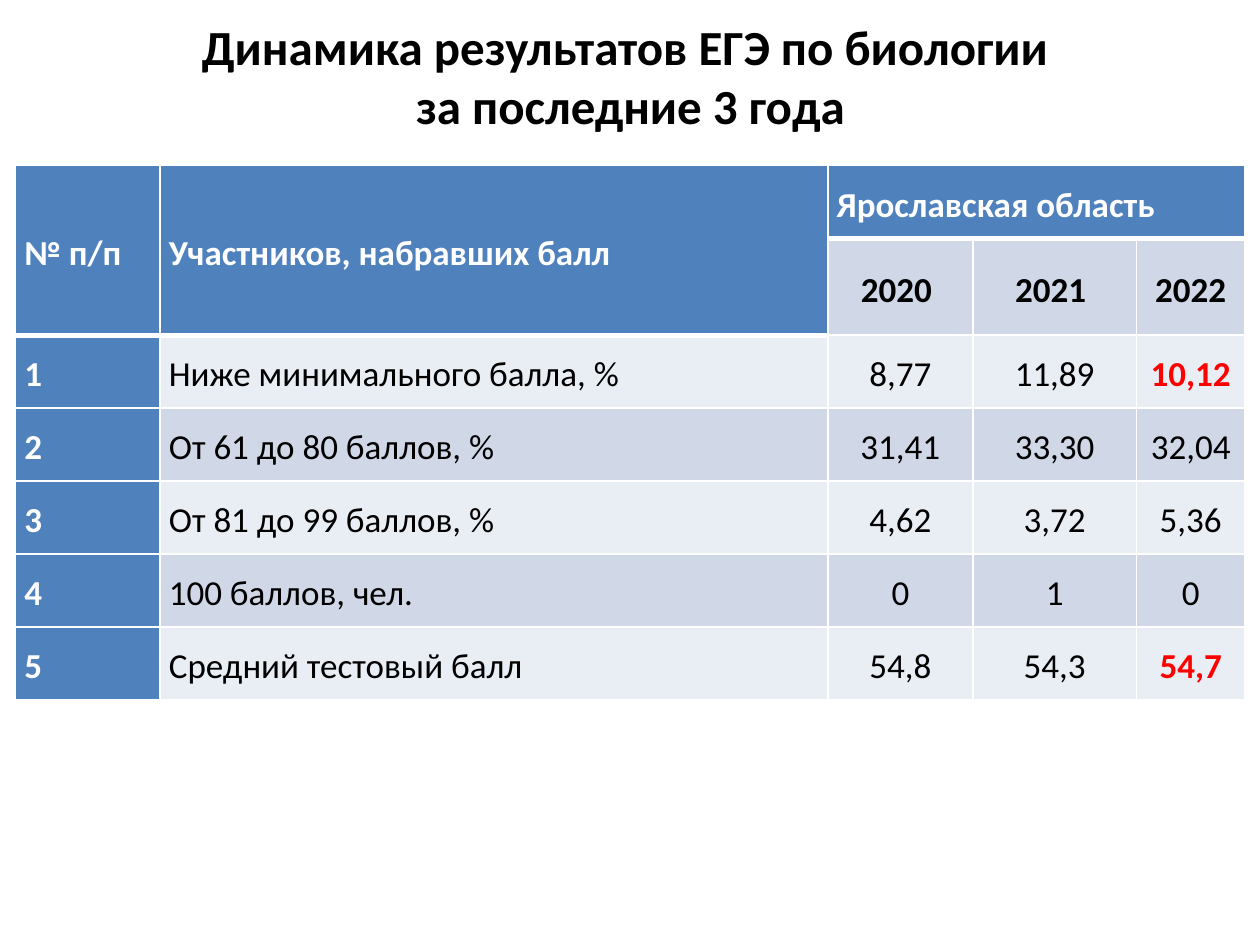
from lxml import etree
from pptx import Presentation
from pptx.dml.color import RGBColor
from pptx.enum import text
from pptx.oxml import ns
from pptx.util import Pt

# Content
TITLE = "Динамика результатов ЕГЭ по биологии \vза последние 3 года"
ROWS = [
    ["№ п/п", "Участников, набравших балл", "Ярославская область", "", ""],
    ["", "", "2020 ", "2021 ", "2022"],
    ["1", "Ниже минимального балла, %", "8,77", "11,89", "10,12"],
    ["2", "От 61 до 80 баллов, %", "31,41", "33,30", "32,04"],
    ["3", "От 81 до 99 баллов, %", "4,62", "3,72", "5,36"],
    ["4", "100 баллов, чел.", "0", "1", "0"],
    ["5", "Средний тестовый балл", "54,8", "54,3", "54,7"],
]
MERGES = [((0, 0), (1, 0)), ((0, 1), (1, 1)), ((0, 2), (0, 4))]
ALERTS = {(2, 4), (6, 4)}

# Theme and layout
THEME = dict(font="Calibri", title=28, body=20, ink="000000", white="FFFFFF",
             alert="FF0000", head="4F81BD", bands=("E9EDF4", "D0D8E8"),
             thin=1, thick=3)
TITLE_BOX = (20, 3.6, 680.4, 79.2)
TABLE_POS = (8.93, 94.6)
COL_WIDTHS = (82.6, 381.6, 82.8, 93.6, 61.9)
HEAD_HEIGHT, ROW_HEIGHT = 55.3, 41.7


def format_runs(p, size, color, bold):
    for r in p.runs:
        r.font.name = THEME["font"]
        r.font.size = Pt(size)
        r.font.bold = bold
        r.font.color.rgb = RGBColor.from_string(color)


def set_borders(cell, top, bottom):
    tc_pr = cell._tc.get_or_add_tcPr()
    widths = dict(lnL=THEME["thin"], lnR=THEME["thin"], lnT=top, lnB=bottom)
    for i, (tag, width) in enumerate(widths.items()):
        ln = etree.Element(ns.qn("a:" + tag), w=str(Pt(width)))
        fill = etree.SubElement(ln, ns.qn("a:solidFill"))
        etree.SubElement(fill, ns.qn("a:srgbClr"), val=THEME["white"])
        tc_pr.insert(i, ln)


def thick_below(row, col):
    return row == 0 or (row == 1 and col < 2)


def edge(row, col):
    return THEME["thick" if thick_below(row, col) else "thin"]


def format_cell(cell, row, col, value):
    header = col == 0 or thick_below(row, col)
    alert = (row, col) in ALERTS
    cell.fill.solid()
    cell.fill.fore_color.rgb = RGBColor.from_string(
        THEME["head"] if header else THEME["bands"][row % 2])
    top = edge(row - 1, col) if row else THEME["thin"]
    set_borders(cell, top, edge(row, col))
    cell.margin_left = cell.margin_right = Pt(5)
    cell.margin_top = cell.margin_bottom = 0
    cell.vertical_anchor = text.MSO_ANCHOR.MIDDLE
    cell.text_frame.text = value
    p = cell.text_frame.paragraphs[0]
    p.line_spacing = 1.15
    centred = col >= 2 and row > 0
    p.alignment = text.PP_ALIGN.CENTER if centred else text.PP_ALIGN.JUSTIFY
    color = THEME["white" if header else "alert" if alert else "ink"]
    format_runs(p, THEME["body"], color, header or row == 1 or alert)


def main():
    prs = Presentation()
    prs.slide_width, prs.slide_height = Pt(720), Pt(540)
    s = prs.slides.add_slide(prs.slide_layouts[5])

    # Title
    title = s.shapes.title
    title.left, title.top, title.width, title.height = map(Pt, TITLE_BOX)
    tf = title.text_frame
    tf.text = TITLE
    tf.vertical_anchor = text.MSO_ANCHOR.MIDDLE
    p = tf.paragraphs[0]
    p.alignment = text.PP_ALIGN.CENTER
    format_runs(p, THEME["title"], THEME["ink"], True)

    # Results table
    heights = [HEAD_HEIGHT if i == 1 else ROW_HEIGHT for i in range(len(ROWS))]
    size = (sum(COL_WIDTHS), sum(heights))
    table = s.shapes.add_table(len(ROWS), len(COL_WIDTHS),
                               *map(Pt, TABLE_POS + size)).table
    for column, width in zip(table.columns, COL_WIDTHS):
        column.width = Pt(width)
    for table_row, height in zip(table.rows, heights):
        table_row.height = Pt(height)
    for row, values in enumerate(ROWS):
        for col, value in enumerate(values):
            format_cell(table.cell(row, col), row, col, value)
    for first, last in MERGES:
        table.cell(*first).merge(table.cell(*last))

    prs.save("out.pptx")


if __name__ == "__main__":
    main()
